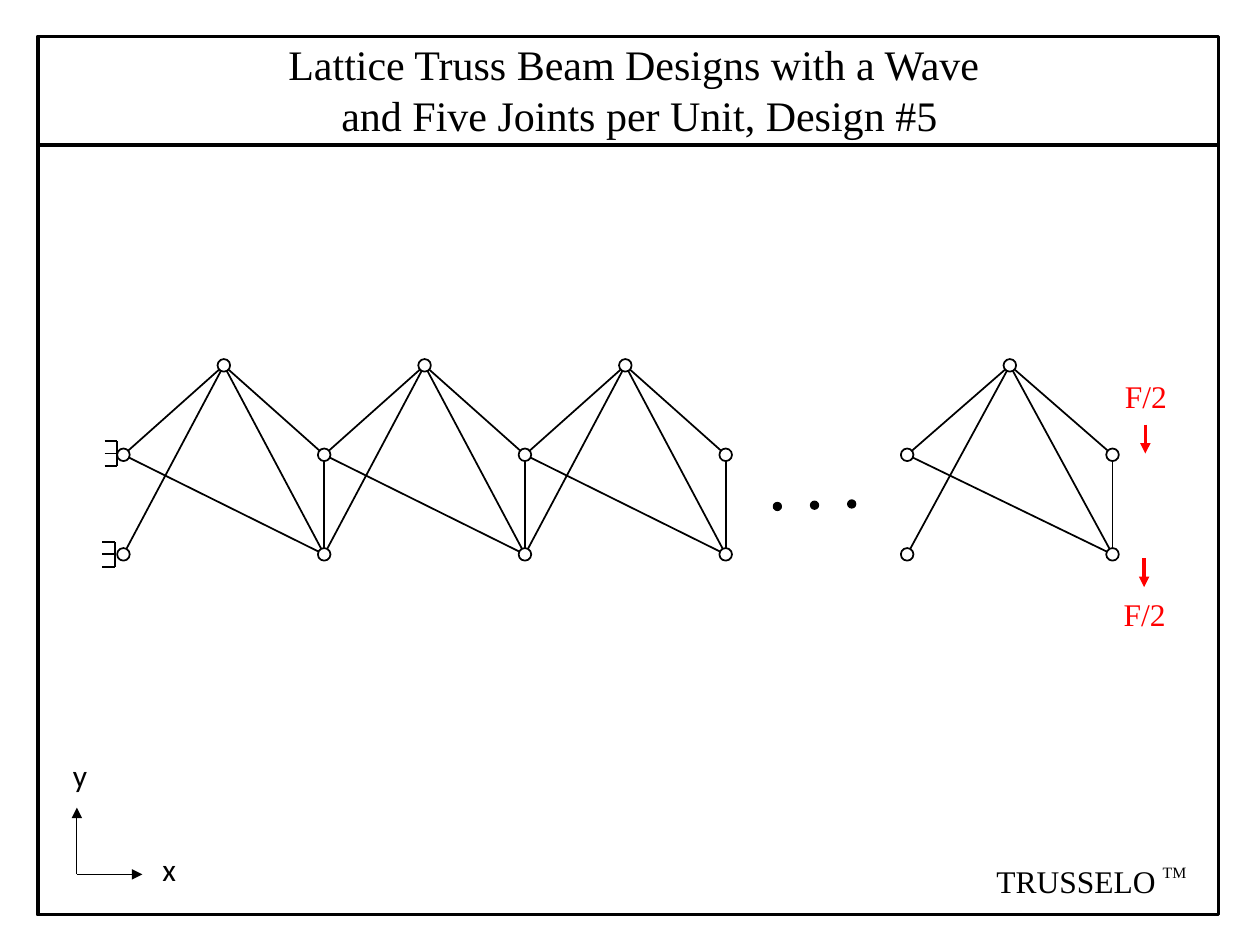
from dataclasses import dataclass
from lxml.etree import SubElement
from pptx import Presentation
from pptx.dml.color import RGBColor
from pptx.enum.shapes import MSO_CONNECTOR, MSO_SHAPE
from pptx.oxml.ns import qn
from pptx.util import Inches, Pt


@dataclass(frozen=True)
class Theme:
    """Hold the colours, fonts, type sizes and line widths."""
    ink: RGBColor = RGBColor(0, 0, 0)
    paper: RGBColor = RGBColor(255, 255, 255)
    load: RGBColor = RGBColor(255, 0, 0)
    serif: str = "Times New Roman"
    sans: str = "Calibri"
    title: int = 24
    label: int = 18
    mark: int = 9
    thick: float = 2
    thin: float = 1
    hair: float = 0.5


THEME = Theme()


def text(slide, words, box, font=THEME.serif, size=THEME.label,
         color=THEME.ink, indents=(0,), wrap=False):
    """Write one paragraph for each line of words, with its left indent."""
    frame = slide.shapes.add_textbox(*map(Inches, box)).text_frame
    frame.word_wrap = wrap
    frame.text = words
    for para, indent in zip(frame.paragraphs, indents):
        para.font.name = font
        para.font.size = Pt(size)
        para.font.color.rgb = color
        para._p.get_or_add_pPr().set("marL", str(Inches(indent)))


def line(slide, start, end, color=THEME.ink, width=THEME.thin, arrow=False):
    """Draw a straight line, with an arrowhead at its end if asked."""
    rod = slide.shapes.add_connector(
        MSO_CONNECTOR.STRAIGHT, *map(Inches, (*start, *end)))
    rod.line.color.rgb = color
    rod.line.width = Pt(width)
    if arrow:
        SubElement(rod.line._get_or_add_ln(), qn("a:tailEnd"), type="triangle")
    SubElement(rod._element.spPr, qn("a:effectLst"))


def shape(slide, kind, box, fill=None, width=THEME.thin):
    """Draw a preset shape with a black outline."""
    item = slide.shapes.add_shape(kind, *map(Inches, box))
    item.shadow.inherit = False
    if fill is None:
        item.fill.background()
    else:
        item.fill.solid()
        item.fill.fore_color.rgb = fill
    item.line.color.rgb = THEME.ink
    item.line.width = Pt(width)


def disc(slide, center, size=0.1, fill=THEME.paper):
    """Draw a round joint or dot about its center."""
    x, y = center
    shape(slide, MSO_SHAPE.OVAL, (x - size / 2, y - size / 2, size, size), fill)


def header(slide, box, depth=0.86):
    """Draw the page frame, its title rule and the title."""
    left, top, width, _ = box
    shape(slide, MSO_SHAPE.RECTANGLE, box, width=THEME.thick)
    rule = top + depth
    line(slide, (left, rule), (left + width, rule), width=THEME.thick)
    text(slide, "Lattice Truss Beam Designs with a Wave\n"
         "and Five Joints per Unit, Design #5",
         (left + 1.89, top - 0.03, 5.88, 0.91), size=THEME.title,
         indents=(0, 0.42), wrap=True)


def truss(slide, box, count=1):
    """Draw a row of truss units that share their side joints."""
    left, top, width, height = box
    pitch = width / count
    mid, low = top + 0.71, top + height
    upper = [(left + i * pitch, mid) for i in range(count + 1)]
    lower = [(x, low) for x, _ in upper]
    peaks = [(x + pitch / 2, top) for x, _ in upper[:-1]]
    for i, peak in enumerate(peaks):
        for joint in (upper[i], lower[i], upper[i + 1], lower[i + 1]):
            line(slide, peak, joint)
        line(slide, upper[i], lower[i + 1])
        line(slide, upper[i + 1], lower[i + 1])
    for joint in upper + lower + peaks:
        disc(slide, joint)


def support(slide, box):
    """Draw a fixed support as a wall with three prongs."""
    left, top, width, height = box
    wall = left + width
    line(slide, (wall, top), (wall, top + height))
    for i in range(3):
        y = top + i * height / 2
        line(slide, (left, y), (wall, y))


def dots(slide, box, count=3):
    """Draw evenly spaced dots for the units left out."""
    left, top, width, height = box
    for i in range(count):
        disc(slide, (left + i * width / (count - 1), top - i * height / 2),
             0.06, THEME.ink)


def force(slide, box, drop):
    """Draw a load arrow down the box, with its label at a vertical offset."""
    left, top, _, height = box
    line(slide, (left, top), (left, top + height), THEME.load,
         THEME.thick, arrow=True)
    text(slide, "F/2", (left - 0.26, top + drop, 0.6, 0.4), color=THEME.load)


def axes(slide, box):
    """Draw the x and y axes from the lower left corner of the box."""
    left, top, width, height = box
    base = top + height
    ends = {"x": ((left + width, base), (0.06, -0.24)),
            "y": ((left, top), (-0.13, -0.46))}
    for name, ((x, y), (across, down)) in ends.items():
        line(slide, (left, base), (x, y), width=THEME.hair, arrow=True)
        text(slide, name, (x + across, y + down, 0.31, 0.4), THEME.sans)


def brand(slide, box):
    """Write the trade name and its raised mark."""
    left, top, width, height = box
    text(slide, "TRUSSELO", (left, top, width, height))
    text(slide, "TM", (left + 1.32, top + 0.01, 0.4, 0.24), size=THEME.mark)


def main():
    """Build and save the slide."""
    deck = Presentation()
    deck.slide_width, deck.slide_height = Inches(10), Inches(7.5)
    slide = deck.slides.add_slide(deck.slide_layouts[6])
    header(slide, (0.3, 0.29, 9.37, 6.97))
    for left, top in ((0.83, 3.5), (0.81, 4.3)):
        support(slide, (left, top, 0.1, 0.2))
    truss(slide, (0.98, 2.9, 4.78, 1.5), count=3)
    dots(slide, (6.17, 4.02, 0.59, 0.02))
    truss(slide, (7.2, 2.9, 1.63, 1.5))
    force(slide, (9.09, 3.37, 0, 0.23), drop=-0.43)
    force(slide, (9.08, 4.43, 0, 0.23), drop=0.24)
    axes(slide, (0.61, 6.41, 0.52, 0.53))
    brand(slide, (7.81, 6.79, 1.52, 0.4))
    deck.save("out.pptx")


if __name__ == "__main__":
    main()
